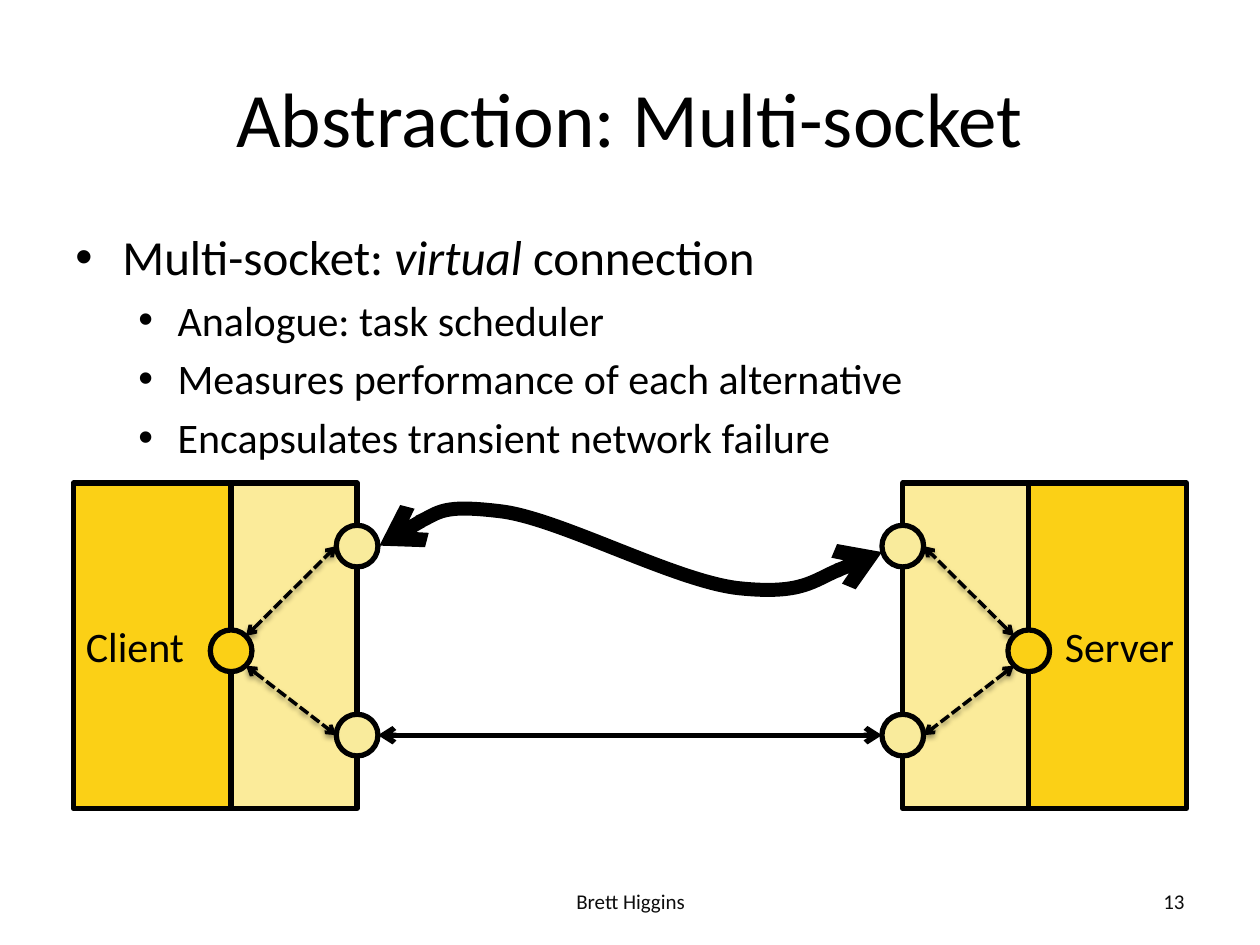
from lxml.etree import SubElement
from pptx import Presentation
from pptx.dml.color import RGBColor
from pptx.enum.dml import MSO_LINE
from pptx.enum.shapes import MSO_CONNECTOR, MSO_SHAPE
from pptx.enum.text import MSO_ANCHOR, PP_ALIGN
from pptx.oxml.ns import qn
from pptx.util import Cm, Pt

BLACK, FOOTER = "000000", "0D0D0D"
GOLD, CREAM, PALE = "FBD016", "FBEB9A", "F9EB9C"


def color(hex_value):
    return RGBColor.from_string(hex_value)


def apply(target, formats):
    for name, value in formats.items():
        setattr(target, name, value)


def add_xml(parent, tag, **attributes):
    return SubElement(parent, qn(tag), {k: str(v) for k, v in attributes.items()})


class Diagram:
    font = "Calibri"

    def __init__(self, slide):
        self.slide = slide

    def add_text(self, paragraph, text, size, ink=BLACK, italic=False):
        run = paragraph.add_run()
        run.text = text
        apply(run.font, {"name": self.font, "size": Pt(size), "italic": italic})
        run.font.color.rgb = color(ink)

    def label(self, frame, text, size, align, ink=BLACK, wrap=True):
        apply(frame, {"word_wrap": wrap, "vertical_anchor": MSO_ANCHOR.MIDDLE})
        paragraph = frame.paragraphs[0]
        paragraph.alignment = align
        self.add_text(paragraph, text, size, ink)

    def text_box(self, x, y, w, h):
        return self.slide.shapes.add_textbox(Cm(x), Cm(y), Cm(w), Cm(h)).text_frame

    def bullet(self, paragraph, parts, size, margin, hang):
        properties = paragraph._p.get_or_add_pPr()
        properties.set("marL", str(Cm(margin)))
        properties.set("indent", str(-Cm(hang)))
        add_xml(properties, "a:buFont", typeface="Arial")
        add_xml(properties, "a:buChar", char="•")
        for text, italic in parts:
            self.add_text(paragraph, text, size, italic=italic)

    def outline(self, shape, width):
        shape.line.color.rgb = color(BLACK)
        shape.line.width = Pt(width)

    def shape(self, kind, x, y, w, h, fill):
        shape = self.slide.shapes.add_shape(kind, Cm(x), Cm(y), Cm(w), Cm(h))
        shape.shadow.inherit = False
        shape.fill.solid()
        shape.fill.fore_color.rgb = color(fill)
        self.outline(shape, 3)
        return shape

    def endpoint(self, center, fill):
        x, y = center
        self.shape(MSO_SHAPE.OVAL, x - RADIUS, y - RADIUS, 2 * RADIUS, 2 * RADIUS, fill)

    def arrowheads(self, shape):
        line = shape._element.spPr.find(qn("a:ln"))
        for end in ("a:headEnd", "a:tailEnd"):
            add_xml(line, end, type="arrow")

    def arrow(self, start, end, width, dashed=False):
        points = [Cm(value) for value in (*start, *end)]
        link = self.slide.shapes.add_connector(MSO_CONNECTOR.STRAIGHT, *points)
        self.outline(link, width)
        if dashed:
            link.line.dash_style = MSO_LINE.SQUARE_DOT
        self.arrowheads(link)
        effects = add_xml(link._element.spPr, "a:effectLst")
        if dashed:
            shadow = add_xml(effects, "a:outerShdw", blurRad=Pt(3.1), dist=Pt(1.6),
                             dir=5400000, rotWithShape=0)
            ink = add_xml(shadow, "a:srgbClr", val=BLACK)
            add_xml(ink, "a:alpha", val=38000)

    def curve(self, start, controls, width):
        builder = self.slide.shapes.build_freeform(Cm(start[0]), Cm(start[1]))
        builder.add_line_segments([(Cm(x), Cm(y)) for x, y in controls], close=False)
        curve = builder.convert_to_shape()
        curve.shadow.inherit = False
        curve.fill.background()
        self.outline(curve, width)
        self.arrowheads(curve)
        # Join every three points into one Bézier segment
        steps = list(curve._element.iter(qn("a:lnTo")))
        outline = steps[0].getparent()
        for first in range(0, len(steps), 3):
            bezier = add_xml(outline, "a:cubicBezTo")
            for step in steps[first:first + 3]:
                bezier.append(step[0])
                outline.remove(step)


# Geometry of the client half; the server half mirrors it
WIDTH, HEIGHT = 25.4, 19.05
TOP, BOX_HEIGHT = 9.74, 6.56
APP_LEFT, APP_WIDTH, LAYER_WIDTH = 1.48, 3.18, 2.54
RADIUS = 0.42
DIAGONAL = 0.3
APP_X = APP_LEFT + APP_WIDTH
NET_X = APP_X + LAYER_WIDTH
APP_Y, NET_YS = 13.12, (11.01, 14.82)


def keep(x, width=0):
    return x


def mirror(x, width=0):
    return WIDTH - x - width


presentation = Presentation()
apply(presentation, {"slide_width": Cm(WIDTH), "slide_height": Cm(HEIGHT)})
diagram = Diagram(presentation.slides.add_slide(presentation.slide_layouts[6]))

# Title and bullets
diagram.label(diagram.text_box(1.27, 0.76, 22.86, 3.18),
              "Abstraction: Multi-socket", 44, PP_ALIGN.CENTER)
body = diagram.text_box(1.27, 4.45, 22.86, 12.57)
body.word_wrap = True
diagram.bullet(body.paragraphs[0],
               [("Multi-socket: ", False), ("virtual", True), (" connection", False)],
               28, 0.95, 0.95)
for point in ("Analogue: task scheduler",
              "Measures performance of each alternative",
              "Encapsulates transient network failure"):
    paragraph = body.add_paragraph()
    apply(paragraph, {"level": 1, "space_before": Pt(4.8)})
    diagram.bullet(paragraph, [(point, False)], 24, 2.06, 0.79)

# Client and server boxes
sides = (("Client", PP_ALIGN.LEFT, keep), ("Server", PP_ALIGN.RIGHT, mirror))
for name, align, place in sides:
    diagram.shape(MSO_SHAPE.RECTANGLE, place(APP_X, LAYER_WIDTH), TOP,
                  LAYER_WIDTH, BOX_HEIGHT, CREAM)
    app = diagram.shape(MSO_SHAPE.RECTANGLE, place(APP_LEFT, APP_WIDTH), TOP,
                        APP_WIDTH, BOX_HEIGHT, GOLD)
    diagram.label(app.text_frame, name, 24, align, wrap=False)

# Sockets and the dashed links between them
for name, align, place in sides:
    diagram.endpoint((place(APP_X), APP_Y), GOLD)
    for net_y, offset in zip(NET_YS, (-DIAGONAL, DIAGONAL)):
        diagram.endpoint((place(NET_X), net_y), PALE)
        diagram.arrow((place(APP_X + DIAGONAL), APP_Y + offset),
                      (place(NET_X - RADIUS), net_y), 2, dashed=True)

# Network connections
diagram.arrow((NET_X + RADIUS, NET_YS[1]), (mirror(NET_X + RADIUS), NET_YS[1]), 3)
diagram.curve((7.65, 11), [(8.28, 10.57), (8.89, 10.16), (10.11, 10.31),
                           (11.3, 10.46), (13.64, 11.73), (14.91, 11.86),
                           (16.18, 11.99), (17.32, 11.25), (17.78, 11.13)], 8)

# Footer
diagram.label(diagram.text_box(8.69, 17.65, 8.05, 1.02), "Brett Higgins", 12,
              PP_ALIGN.CENTER, FOOTER)
diagram.label(diagram.text_box(18.21, 17.65, 5.92, 1.02), "13", 12,
              PP_ALIGN.RIGHT, FOOTER)

presentation.save("out.pptx")
